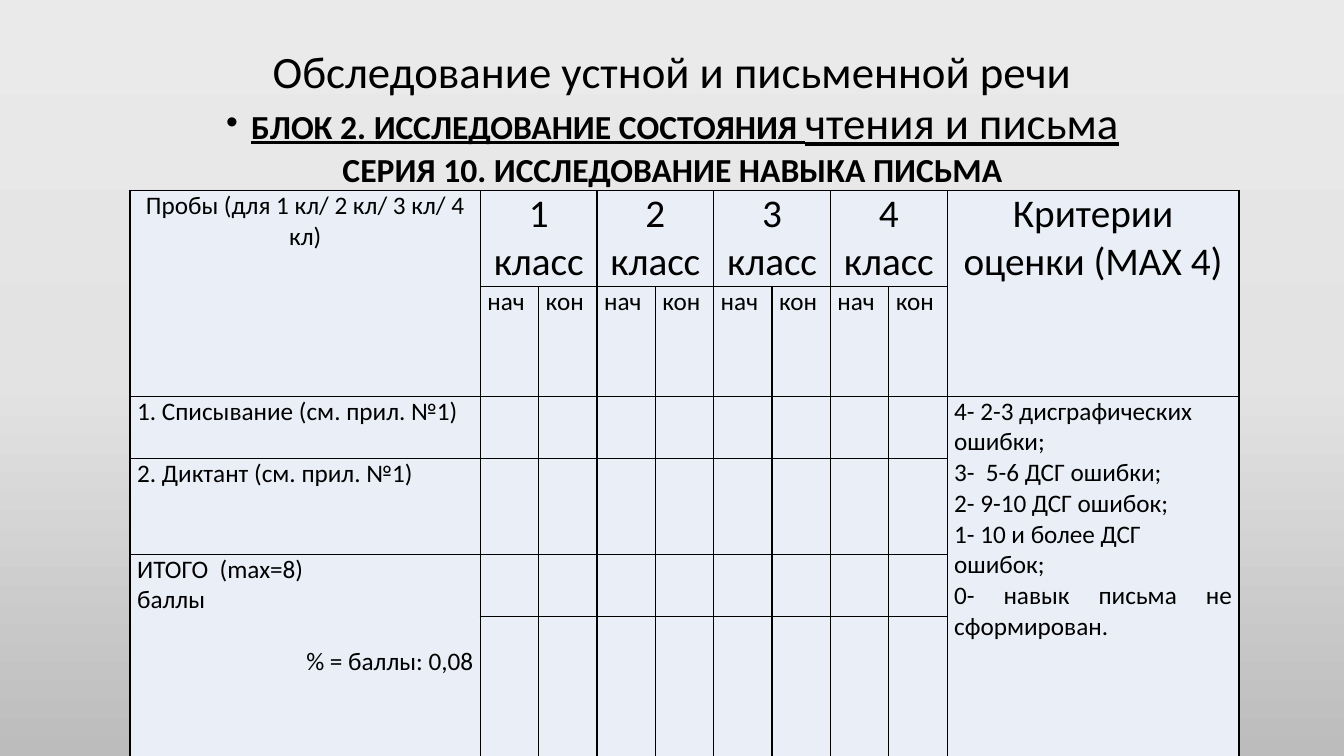
"""Build the slide on testing writing skills, with its score table."""
import copy
import dataclasses

import lxml.etree
import pptx
import pptx.dml.color
import pptx.enum.text
import pptx.util

ALIGN = pptx.enum.text.PP_ALIGN
NS = "http://schemas.openxmlformats.org/drawingml/2006/main"
WIDTH, HEIGHT = 13.33, 7.5
FONT = "Calibri"
COLORS = {"text": "000000", "cell": "EAEFF7", "top": "EBEAEA",
          "middle": "E4E3E3", "base": "BDBCBC"}
LEFT, TOP, UNIT = 1.29, 1.89, 11 / 19
COLS = [6] + [1] * 8 + [5]
ROWS = [0.127, 0.145, 0.082, 0.127, 0.082, 0.187]


@dataclasses.dataclass
class Line:
    text: str
    align: ALIGN = ALIGN.LEFT
    size: int = 18
    before: int = 0


@dataclasses.dataclass
class Entry:
    row: int
    col: int
    lines: list[Line]
    down: int = 1
    across: int = 1


ENTRIES = [
    Entry(0, 0, [Line("Пробы (для 1 кл/ 2 кл/ 3 кл/ 4 кл)", ALIGN.CENTER)], down=2),
    *[Entry(0, 2 * n - 1, [Line(f"{n} класс", ALIGN.CENTER, 28)], across=2)
      for n in range(1, 5)],
    Entry(0, 9, [Line("Критерии оценки (MAX 4)", ALIGN.CENTER, 28)], down=2),
    *[Entry(1, col, [Line("нач" if col % 2 else "кон", ALIGN.JUSTIFY)])
      for col in range(1, 9)],
    Entry(2, 0, [Line("1. Списывание (см. прил. №1)")]),
    Entry(2, 9, [Line("4- 2-3 дисграфических ошибки;"),
                 Line("3-  5-6 ДСГ ошибки;"),
                 Line("2- 9-10 ДСГ ошибок;"),
                 Line("1- 10 и более ДСГ ошибок;"),
                 Line("0- навык письма не сформирован.", ALIGN.JUSTIFY)], down=4),
    Entry(3, 0, [Line("2. Диктант (см. прил. №1)")]),
    Entry(4, 0, [Line("ИТОГО  (max=8)\vбаллы"),
                 Line("% = баллы: 0,08", ALIGN.RIGHT, before=22)], down=2),
]


def color(name: str) -> pptx.dml.color.RGBColor:
    return pptx.dml.color.RGBColor.from_string(COLORS[name])


def style(font, size: int, bold: bool = False) -> None:
    font.name, font.size, font.bold = FONT, pptx.util.Pt(size), bold
    font.color.rgb = color("text")


def place(shape, left: float, top: float, width: float, height: float) -> None:
    shape.left, shape.top, shape.width, shape.height = (
        pptx.util.Inches(n) for n in (left, top, width, height))


def write(frame, lines: list[Line]) -> None:
    for n, line in enumerate(lines):
        para = frame.add_paragraph() if n else frame.paragraphs[0]
        para.text = line.text
        para.alignment = line.align
        para.space_before = pptx.util.Pt(line.before)
        style(para.font, line.size)


def paint(slide) -> None:
    fill = slide.background.fill
    fill.gradient()
    fill.gradient_angle = 270
    first = fill.gradient_stops[0]._gs
    first.addnext(copy.deepcopy(first))
    stops = zip(fill.gradient_stops, ("top", "middle", "base"), (0, 0.5, 1))
    for stop, name, share in stops:
        stop.color.rgb = color(name)
        stop.position = share


def border(cell) -> None:
    props = cell._tc.get_or_add_tcPr()
    for side in "LRTB":
        edge = lxml.etree.SubElement(props, f"{{{NS}}}ln{side}", w="12700")
        fill = lxml.etree.SubElement(edge, f"{{{NS}}}solidFill")
        lxml.etree.SubElement(fill, f"{{{NS}}}srgbClr", val=COLORS["text"])


def head(slide) -> None:
    title = slide.shapes.title
    place(title, 0.92, 0.4, 11.5, 0.67)
    frame = title.text_frame
    frame.auto_size = pptx.enum.text.MSO_AUTO_SIZE.NONE
    frame.vertical_anchor = pptx.enum.text.MSO_ANCHOR.MIDDLE
    write(frame, [Line("Обследование устной и письменной речи", ALIGN.CENTER, 32)])
    frame.paragraphs[0].line_spacing = 0.9


def series(slide) -> None:
    box = slide.shapes.add_textbox(0, 0, 0, 0)
    place(box, 0.92, 0.89, 11.5, 1)
    frame = box.text_frame
    frame.word_wrap = True
    block = frame.paragraphs[0]
    block.alignment = ALIGN.CENTER
    for text, size, bold in (("БЛОК 2. ИССЛЕДОВАНИЕ СОСТОЯНИЯ ", 24, True),
                             ("чтения и письма", 32, False)):
        run = block.add_run()
        run.text = text
        style(run.font, size, bold)
        run.font.underline = True
    props = block._p.get_or_add_pPr()
    props.set("marL", "228600")
    props.set("indent", "-228600")
    lxml.etree.SubElement(props, f"{{{NS}}}buFont", typeface="Arial")
    lxml.etree.SubElement(props, f"{{{NS}}}buChar", char="•")
    para = frame.add_paragraph()
    para.text = "СЕРИЯ 10. ИССЛЕДОВАНИЕ НАВЫКА ПИСЬМА"
    para.alignment = ALIGN.CENTER
    style(para.font, 24, True)


def scores(slide) -> None:
    frame = slide.shapes.add_table(len(ROWS), len(COLS), 0, 0, 0, 0)
    place(frame, LEFT, TOP, sum(COLS) * UNIT, sum(ROWS) * HEIGHT)
    table = frame.table
    table.first_row = table.horz_banding = False
    for col, span in zip(table.columns, COLS):
        col.width = pptx.util.Inches(span * UNIT)
    for row, share in zip(table.rows, ROWS):
        row.height = pptx.util.Inches(share * HEIGHT)
    for cell in table.iter_cells():
        border(cell)
        cell.fill.solid()
        cell.fill.fore_color.rgb = color("cell")
        cell.margin_left = cell.margin_right = pptx.util.Inches(0.07)
        cell.margin_top = cell.margin_bottom = 0
    for item in ENTRIES:
        cell = table.cell(item.row, item.col)
        if item.down * item.across > 1:
            cell.merge(table.cell(item.row + item.down - 1,
                                  item.col + item.across - 1))
        write(cell.text_frame, item.lines)


def main() -> None:
    deck = pptx.Presentation()
    deck.slide_width = pptx.util.Inches(WIDTH)
    deck.slide_height = pptx.util.Inches(HEIGHT)
    slide = deck.slides.add_slide(deck.slide_layouts[5])
    paint(slide)
    head(slide)
    series(slide)
    scores(slide)
    deck.save("out.pptx")


if __name__ == "__main__":
    main()
